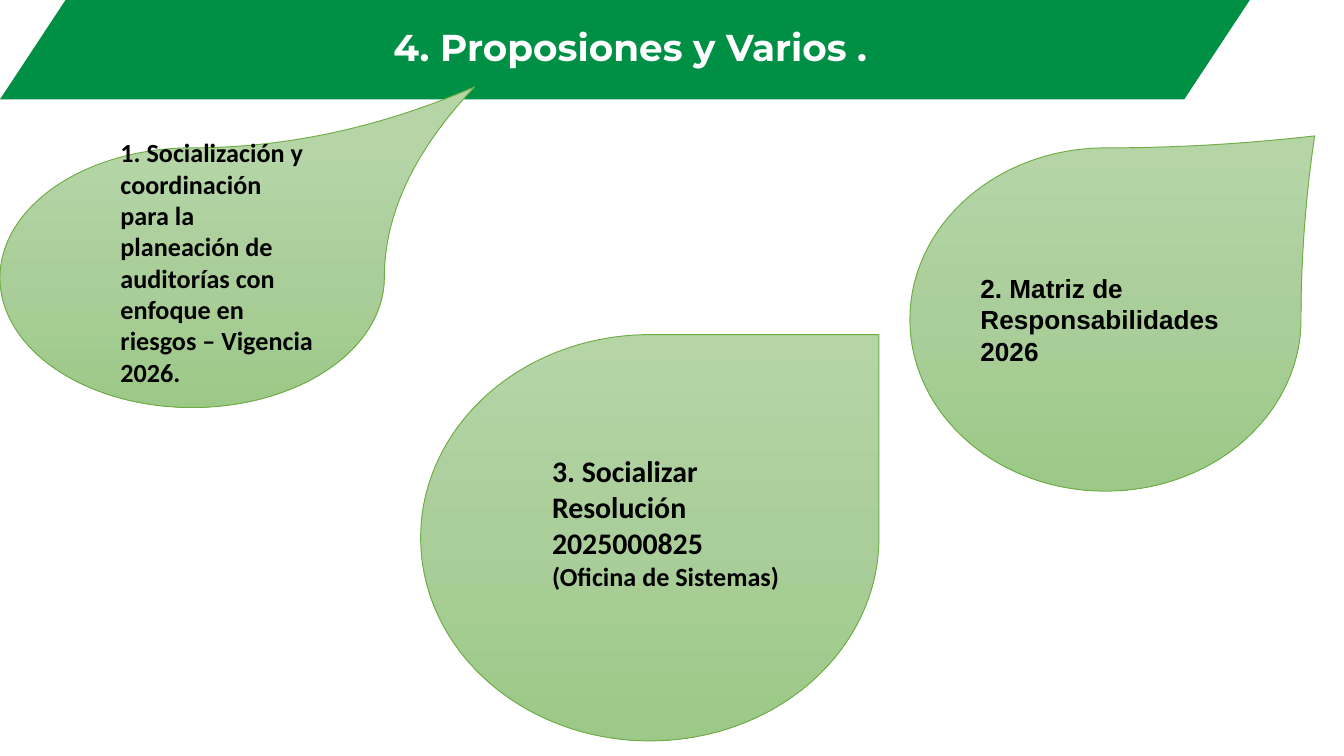
"""Build the slide of proposals and other business with three teardrops."""
from copy import deepcopy

from pptx import Presentation, util as u
from pptx.dml.color import RGBColor
from pptx.enum import shapes, text

COLORS = {"band": "009045", "edge": "70AD47", "top": "B5D5A7", "middle": "AACE9A",
          "bottom": "9CC987", "ink": "000000", "white": "FFFFFF"}
RGB = {name: RGBColor.from_string(value) for name, value in COLORS.items()}

prs = Presentation()
prs.slide_width = u.Inches(10)
prs.slide_height = prs.slide_width * 9 // 16
COL, ROW = prs.slide_width / 100, prs.slide_height / 100
s = prs.slides.add_slide(prs.slide_layouts[6])


def add_shape(kind, left, top, width, height):
    sp = s.shapes.add_shape(kind, int(left * COL), int(top * ROW), int(width * COL), int(height * ROW))
    sp.shadow.inherit = False
    sp.text_frame.word_wrap = True
    sp.text_frame.vertical_anchor = text.MSO_ANCHOR.MIDDLE
    return sp


def write(p, words, size=14, font="Calibri", color="ink", align=text.PP_ALIGN.LEFT, indent=0):
    p.alignment = align
    p._p.get_or_add_pPr().set("marL", str(int(indent * COL)))
    r = p.add_run()
    r.text = words
    r.font.size, r.font.name, r.font.bold = u.Pt(size), font, True
    r.font.color.rgb = RGB[color]


band = add_shape(shapes.MSO_SHAPE.PARALLELOGRAM, 0, 0, 93, 13.16)
band.adjustments[0] = 0.66
band.fill.solid()
band.fill.fore_color.rgb = RGB["band"]
band.line.fill.background()
tf = band.text_frame
tf.margin_left, tf.margin_right = int(1.5 * COL), int(0.7 * COL)
tf.margin_top = tf.margin_bottom = int(0.7 * ROW)
p = tf.paragraphs[0]
p.line_spacing = 0.9
write(p, "4. Proposiones y Varios .", size=20, font="Montserrat", color="white", align=text.PP_ALIGN.CENTER)

drops = [
    ((0, 19.56, 28.6, 34.35), 1.47, 3.8, 5,
     [("1. Socialización y coordinación para la planeación de auditorías con "
       "enfoque en riesgos – Vigencia 2026.", 14, "Calibri")]),
    ((67.7, 19.56, 29.1, 45.4), 1.07, 0, 0.9,
     [("2. Matriz de Responsabilidades 2026", 14, "Arial")]),
    ((31.3, 44.27, 34.1, 53.74), 1, 3.8, 5,
     [("3. Socializar Resolución 2025000825", 16, "Calibri"),
      ("(Oficina de Sistemas)", 14, "Calibri")]),
]
for box, point, indent, bottom, lines in drops:
    sp = add_shape(shapes.MSO_SHAPE.TEAR, *box)
    sp.adjustments[0] = point
    sp.line.color.rgb = RGB["edge"]
    sp.line.width = u.Pt(0.5)
    sp.fill.gradient()
    sp.fill.gradient_angle = 270
    stops = sp._element.spPr.gradFill.gsLst
    stops.append(deepcopy(stops[0]))
    for i, (stop, name) in enumerate(zip(sp.fill.gradient_stops, ("top", "middle", "bottom"))):
        stop.position = i / 2
        stop.color.rgb = RGB[name]
    tf = sp.text_frame
    tf.margin_bottom = int(bottom * ROW)
    for i, (words, size, font) in enumerate(lines):
        p = tf.add_paragraph() if i else tf.paragraphs[0]
        write(p, words, size=size, font=font, indent=indent)

prs.save("out.pptx")
